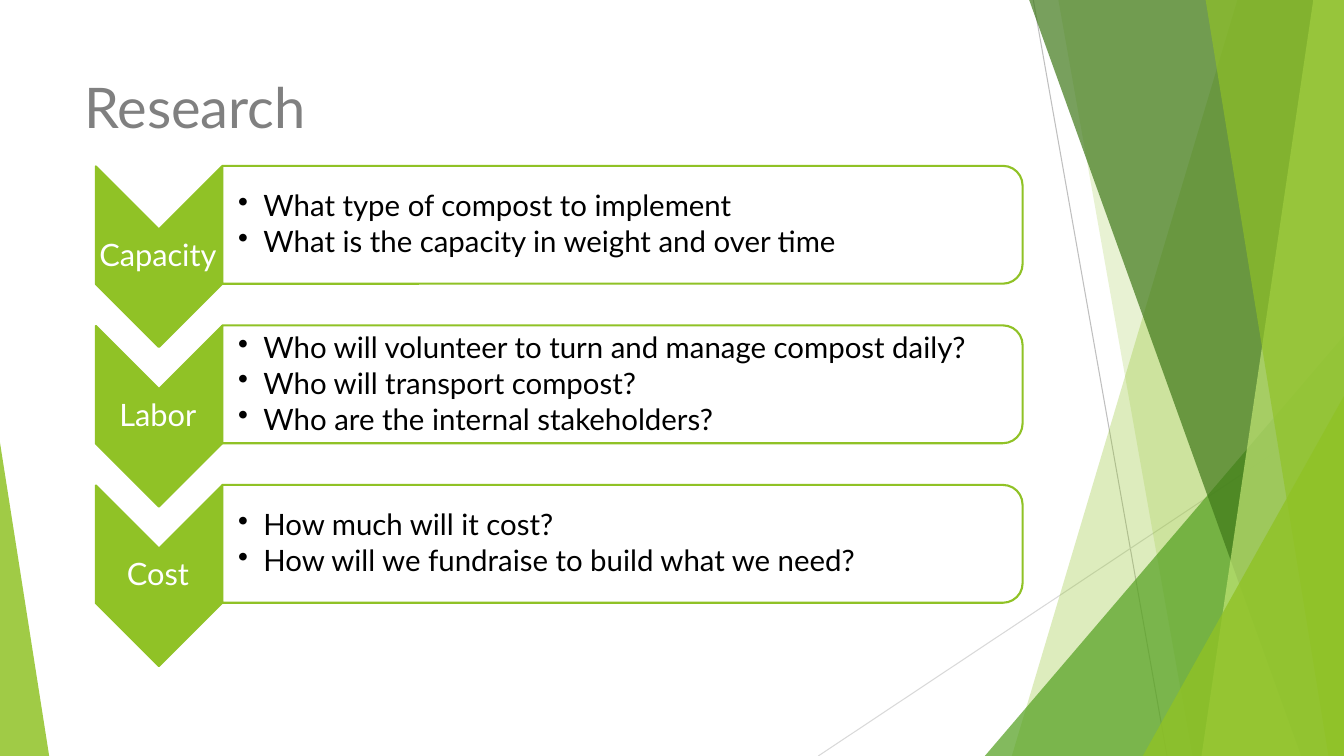
from lxml import etree
from pptx import Presentation
from pptx.dml.color import RGBColor
from pptx.enum.shapes import MSO_CONNECTOR, MSO_SHAPE
from pptx.enum.text import MSO_ANCHOR, PP_ALIGN
from pptx.oxml.ns import qn
from pptx.util import Cm, Pt

STRAIGHT = MSO_CONNECTOR.STRAIGHT
TRIANGLE = MSO_SHAPE.ISOSCELES_TRIANGLE
CHEVRON = MSO_SHAPE.CHEVRON
PANEL = MSO_SHAPE.ROUND_2_SAME_RECTANGLE
TOP, MIDDLE = MSO_ANCHOR.TOP, MSO_ANCHOR.MIDDLE
LEFT, CENTER = PP_ALIGN.LEFT, PP_ALIGN.CENTER

FONT = "Lato"
COLORS = {
    "lime": "90C226",
    "pale lime": "C0E474",
    "green": "54A021",
    "dark green": "3F7819",
    "silver": "BFBFBF",
    "light gray": "D9D9D9",
    "gray": "808080",
    "white": "FFFFFF",
    "black": "000000",
}
WIDTH, HEIGHT = 33.87, 19.05
ROW_PITCH = 4.02

presentation = Presentation()
presentation.slide_width = Cm(WIDTH)
presentation.slide_height = Cm(HEIGHT)
slide = presentation.slides.add_slide(presentation.slide_layouts[6])
shapes = slide.shapes


def paint(shape, color, opacity=100, outline=None):
    shape.shadow.inherit = False
    shape.fill.solid()
    shape.fill.fore_color.rgb = RGBColor.from_string(COLORS[color])
    if opacity < 100:
        fill_color = shape._element.spPr.find(qn("a:solidFill")).find(qn("a:srgbClr"))
        etree.SubElement(fill_color, qn("a:alpha"), val=str(opacity * 1000))
    if outline:
        shape.line.color.rgb = RGBColor.from_string(COLORS[outline])
        shape.line.width = Pt(1.5)
    else:
        shape.line.fill.background()


def add_text(text, left, top, width, height, size, color, align=LEFT, anchor=MIDDLE,
             margins=(0.05, 0.05, 0.05, 0.05), spacing=0.9, after=0, bullets=False):
    box = shapes.add_textbox(Cm(left), Cm(top), Cm(width), Cm(height))
    frame = box.text_frame
    frame.word_wrap = True
    frame.vertical_anchor = anchor
    frame.margin_left, frame.margin_top, frame.margin_right, frame.margin_bottom = map(Cm, margins)
    frame.text = text
    for paragraph in frame.paragraphs:
        paragraph.alignment = align
        paragraph.line_spacing = spacing
        paragraph.space_after = Pt(after)
        font = paragraph.runs[0].font
        font.name = FONT
        font.size = Pt(size)
        font.color.rgb = RGBColor.from_string(COLORS[color])
        if bullets:
            properties = paragraph._p.get_or_add_pPr()
            properties.set("marL", str(Cm(0.64)))
            properties.set("indent", str(-Cm(0.64)))
            etree.SubElement(properties, qn("a:buChar"), char="•")


for start_x, start_y, end_x, end_y, color in [
    (26.04, 0, 29.41, HEIGHT, "silver"),
    (WIDTH, 10.24, 20.62, HEIGHT, "light gray"),
]:
    line = shapes.add_connector(STRAIGHT, Cm(start_x), Cm(start_y), Cm(end_x), Cm(end_y))
    line.line.color.rgb = RGBColor.from_string(COLORS[color])
    line.line.width = Pt(0.75)
    etree.SubElement(line._element.spPr, qn("a:effectLst"))

facets = [
    ("band", (31.19, 25.5), "lime", 30),
    ("band", (26.67, 30.05), "lime", 20),
    ("triangle", (24.82, 8.46, 9.05, 1), "green", 72),
    ("band", (25.93, 32.79), "dark green", 70),
    ("band", (33.1, 30.28), "pale lime", 70),
    ("band", (30.38, 33.48), "lime", 65),
    ("triangle", (28.8, 9.98, 5.07, 1), "lime", 80),
    ("triangle", (0, 11.15, 1.24, 0), "lime", 85),
]
for kind, geometry, color, opacity in facets:
    if kind == "band":
        top_x, bottom_x = geometry
        builder = shapes.build_freeform(Cm(top_x), Cm(-0.02))
        corners = [(WIDTH, -0.02), (WIDTH, HEIGHT), (bottom_x, HEIGHT)]
        builder.add_line_segments([(Cm(x), Cm(y)) for x, y in corners], close=True)
        facet = builder.convert_to_shape()
    else:
        left, top, width, apex = geometry
        facet = shapes.add_shape(TRIANGLE, Cm(left), Cm(top), Cm(width), Cm(HEIGHT - top))
        facet.adjustments[0] = apex
    paint(facet, color, opacity)

add_text("Research", 1.88, 1.7, 23.88, 3.66, size=40, color="gray", anchor=TOP,
         margins=(0.25, 0.13, 0.25, 0.13), spacing=1.0)

topics = [
    ("Capacity", ["What type of compost to implement",
                  "What is the capacity in weight and over time"]),
    ("Labor", ["Who will volunteer to turn and manage compost daily?",
               "Who will transport compost?",
               "Who are the internal stakeholders?"]),
    ("Cost", ["How much will it cost?",
              "How will we fundraise to build what we need?"]),
]
for row, (topic, questions) in enumerate(topics):
    offset = row * ROW_PITCH
    chevron = shapes.add_shape(CHEVRON, Cm(1.73), Cm(4.88 + offset), Cm(4.55), Cm(3.18))
    chevron.rotation = 90
    paint(chevron, "lime", outline="lime")
    add_text(topic, 2.39, 5.79 + offset, 3.18, 1.37, size=22, color="white", align=CENTER)

    panel = shapes.add_shape(PANEL, Cm(14.2), Cm(-4.42 + offset), Cm(2.97), Cm(20.17))
    panel.rotation = 90
    paint(panel, "white", 90, outline="lime")
    add_text("\n".join(questions), 5.59, 4.34 + offset, 20.04, 2.67, size=21, color="black",
             margins=(0.41, 0.03, 0.03, 0.03), after=3, bullets=True)

presentation.save("out.pptx")
